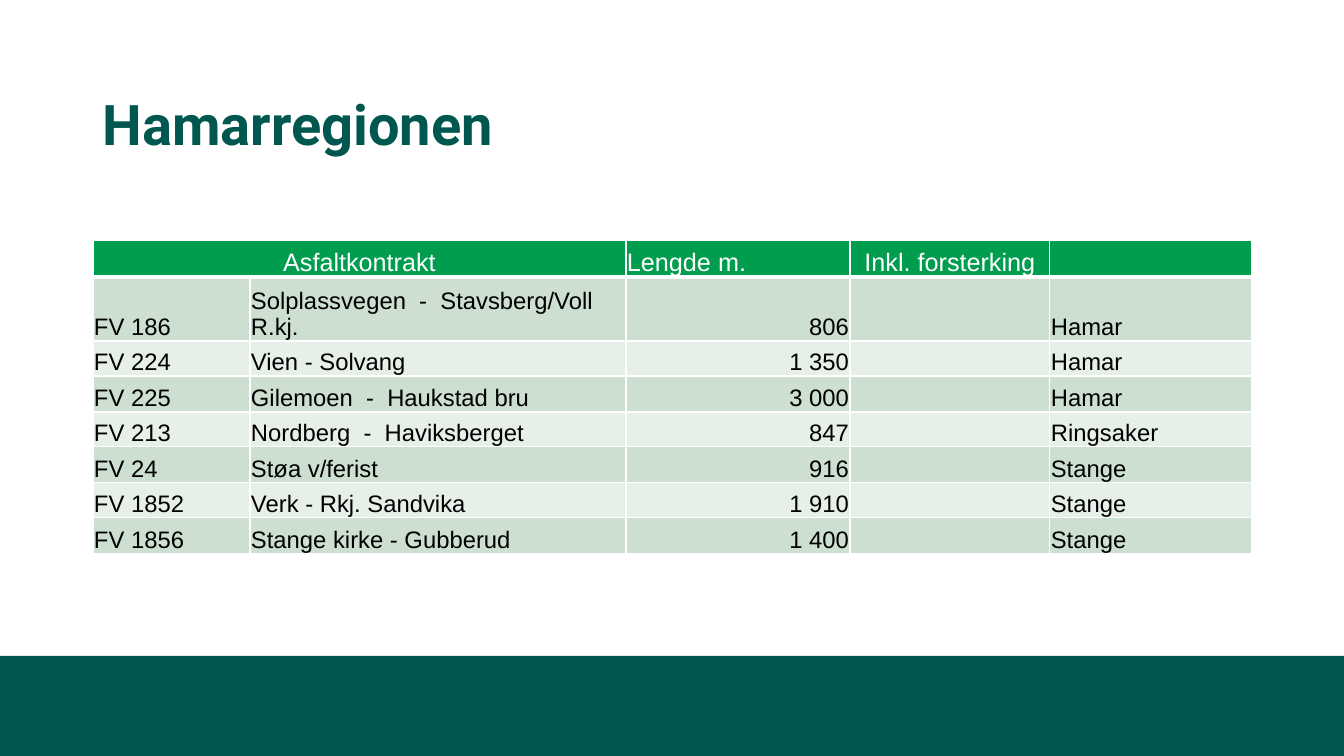
from lxml import etree
from pptx import Presentation
from pptx.dml.color import RGBColor
from pptx.enum.shapes import MSO_SHAPE
from pptx.enum.text import MSO_ANCHOR, PP_ALIGN
from pptx.oxml.ns import qn
from pptx.util import Pt

PX = 914400 / 100.8
LEFT, CENTER, RIGHT = PP_ALIGN.LEFT, PP_ALIGN.CENTER, PP_ALIGN.RIGHT
MIDDLE, BOTTOM = MSO_ANCHOR.MIDDLE, MSO_ANCHOR.BOTTOM
RECTANGLE = MSO_SHAPE.RECTANGLE

COLORS = {
    "dark_green": "00574F",
    "header": "009D4F",
    "band_odd": "CCDFD0",
    "band_even": "E7EFE9",
    "white": "FFFFFF",
    "black": "000000",
}

COLUMN_WIDTHS = [157, 376, 224, 200, 202]
ROW_HEIGHTS = [37, 64] + [35, 36] * 3
HEADER_ALIGN = [CENTER, LEFT, LEFT, CENTER, LEFT]
BODY_ALIGN = [LEFT, LEFT, RIGHT, LEFT, LEFT]
ROWS = [
    ["Asfaltkontrakt", "", "Lengde m.", "Inkl. forsterking", ""],
    ["FV 186", "Solplassvegen  -  Stavsberg/Voll R.kj.", "806", "", "Hamar"],
    ["FV 224", "Vien - Solvang", "1 350", "", "Hamar"],
    ["FV 225", "Gilemoen  -  Haukstad bru", "3 000", "", "Hamar"],
    ["FV 213", "Nordberg  -  Haviksberget", "847", "", "Ringsaker"],
    ["FV 24", "Støa v/ferist", "916", "", "Stange"],
    ["FV 1852", "Verk - Rkj. Sandvika", "1 910", "", "Stange"],
    ["FV 1856", "Stange kirke - Gubberud", "1 400", "", "Stange"],
]


def px(n):
    return round(n * PX)


def write(tf, text, size, color, font="Arial", bold=False, align=LEFT, spacing=1.0):
    p = tf.paragraphs[0]
    p.alignment = align
    p.line_spacing = spacing
    r = p.add_run()
    r.text = text
    r.font.name = font
    r.font.size = Pt(size)
    r.font.bold = bold
    r.font.color.rgb = RGBColor.from_string(COLORS[color])


prs = Presentation()
prs.slide_width, prs.slide_height = px(1344), px(756)
s = prs.slides.add_slide(prs.slide_layouts[6])

# Footer band
band = s.shapes.add_shape(RECTANGLE, 0, px(656), px(1344), px(100))
band.shadow.inherit = False
band.fill.solid()
band.fill.fore_color.rgb = RGBColor.from_string(COLORS["dark_green"])
band.line.fill.background()

# Title
title = s.shapes.add_textbox(px(93), px(69), px(1159), px(116))
tf = title.text_frame
tf.word_wrap = True
tf.vertical_anchor = MIDDLE
write(tf, "Hamarregionen", 40, "dark_green", font="Roboto", bold=True, spacing=0.9)

# Road table
table = s.shapes.add_table(
    len(ROWS), len(COLUMN_WIDTHS), px(93), px(240),
    px(sum(COLUMN_WIDTHS)), px(sum(ROW_HEIGHTS))).table
for column, width in zip(table.columns, COLUMN_WIDTHS):
    column.width = px(width)
for row, height in zip(table.rows, ROW_HEIGHTS):
    row.height = px(height)
table.cell(0, 0).merge(table.cell(0, 1))

for i, values in enumerate(ROWS):
    is_header = i == 0
    fill = "header" if is_header else "band_odd" if i % 2 else "band_even"
    aligns = HEADER_ALIGN if is_header else BODY_ALIGN
    border_widths = {"L": 1, "R": 1, "T": 3 if i == 1 else 1, "B": 3 if is_header else 1}
    for j, value in enumerate(values):
        cell = table.cell(i, j)
        cell.vertical_anchor = BOTTOM
        cell.margin_left = cell.margin_right = cell.margin_top = px(1)
        cell.margin_bottom = 0
        tcPr = cell._tc.get_or_add_tcPr()
        for side, width in border_widths.items():
            ln = etree.SubElement(tcPr, qn(f"a:ln{side}"), w=str(Pt(width)))
            solid = etree.SubElement(ln, qn("a:solidFill"))
            etree.SubElement(solid, qn("a:srgbClr"), val=COLORS["white"])
        cell.fill.solid()
        cell.fill.fore_color.rgb = RGBColor.from_string(COLORS[fill])
        if value:
            write(cell.text_frame, value, 18 if is_header else 17,
                  "white" if is_header else "black", align=aligns[j])

prs.save("out.pptx")
